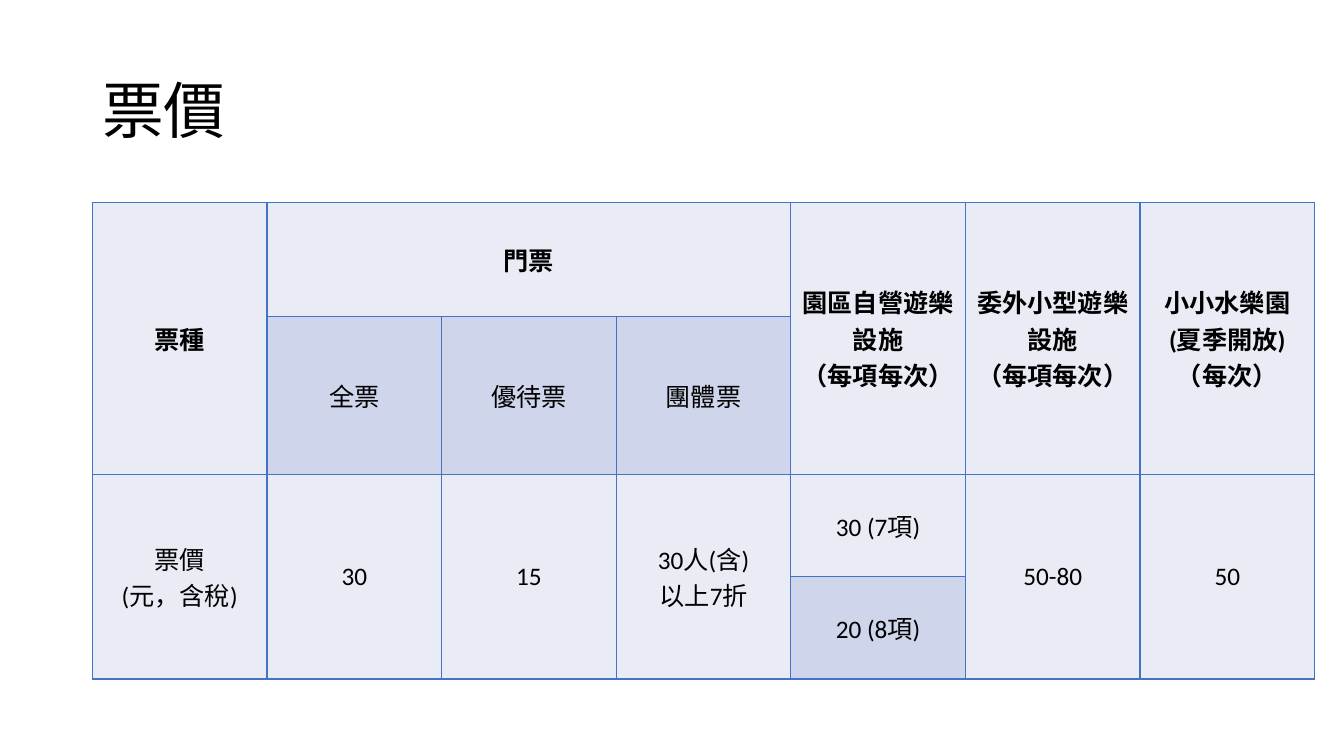
from lxml.etree import SubElement
from pptx import Presentation
from pptx.dml.color import RGBColor
from pptx.enum.text import MSO_ANCHOR, PP_ALIGN
from pptx.oxml.ns import qn
from pptx.util import Cm, Pt

BLACK = RGBColor(0x00, 0x00, 0x00)
BLUE = RGBColor(0x44, 0x72, 0xC4)
PALE = RGBColor(0xE9, 0xEB, 0xF5)
BAND = RGBColor(0xCF, 0xD5, 0xEA)

COL_WIDTH = Cm(4.4)
ROW_HEIGHTS = [Cm(2.88), Cm(3.97), Cm(2.58), Cm(2.58)]
TICKETS = [
    ["票種", "門票", "", "", "園區自營遊樂設施\v（每項每次）",
     "委外小型遊樂設施\v（每項每次）", "小小水樂園\v(夏季開放)\v（每次）"],
    ["", "全票", "優待票", "團體票", "", "", ""],
    ["票價\v(元，含稅)", "30", "15", "30人(含)\v以上7折", "30 (7項)", "50-80", "50"],
    ["", "", "", "", "20 (8項)", "", ""],
]
MERGES = [(0, 1, 0, 3)]
MERGES += [(0, col, 1, col) for col in (0, 4, 5, 6)]
MERGES += [(2, col, 3, col) for col in (0, 1, 2, 3, 5, 6)]
BAND_CELLS = [(1, 1), (1, 2), (1, 3), (3, 4)]
CELL_FORMAT = {
    "vertical_anchor": MSO_ANCHOR.MIDDLE,
    "margin_left": Cm(0.08),
    "margin_right": Cm(0.08),
    "margin_top": Cm(0.08),
    "margin_bottom": Cm(0.08),
}


def format_runs(p, size, bold):
    for r in p.runs:
        for name, value in {"name": "Calibri", "size": size, "bold": bold}.items():
            setattr(r.font, name, value)
        r.font.color.rgb = BLACK


def add_borders(cell):
    tcPr = cell._tc.get_or_add_tcPr()
    for side in ("a:lnL", "a:lnR", "a:lnT", "a:lnB"):
        ln = SubElement(tcPr, qn(side), w=str(Pt(1)))
        fill = SubElement(ln, qn("a:solidFill"))
        SubElement(fill, qn("a:srgbClr"), val=str(BLUE))


prs = Presentation()
prs.slide_width = Cm(33.87)
prs.slide_height = Cm(19.05)
s = prs.slides.add_slide(prs.slide_layouts[6])

sp = s.shapes.add_textbox(Cm(2.33), Cm(1.01), Cm(29.21), Cm(3.68))
tf = sp.text_frame
tf.word_wrap = True
tf.vertical_anchor = MSO_ANCHOR.MIDDLE
p = tf.paragraphs[0]
p.text = "票價"
p.line_spacing = 0.9
format_runs(p, Pt(44), False)

frame = s.shapes.add_table(len(TICKETS), len(TICKETS[0]), Cm(2.33), Cm(5.1),
                           COL_WIDTH * len(TICKETS[0]), sum(ROW_HEIGHTS))
table = frame.table
table.first_row = False
table.horz_banding = False
for column in table.columns:
    column.width = COL_WIDTH
for row, height in zip(table.rows, ROW_HEIGHTS):
    row.height = height

for i, labels in enumerate(TICKETS):
    for j, label in enumerate(labels):
        cell = table.cell(i, j)
        for name, value in CELL_FORMAT.items():
            setattr(cell, name, value)
        add_borders(cell)
        cell.fill.solid()
        cell.fill.fore_color.rgb = BAND if (i, j) in BAND_CELLS else PALE
        p = cell.text_frame.paragraphs[0]
        p.text = label
        p.alignment = PP_ALIGN.CENTER
        format_runs(p, Pt(18), i == 0)

for top, left, bottom, right in MERGES:
    table.cell(top, left).merge(table.cell(bottom, right))

prs.save("out.pptx")
